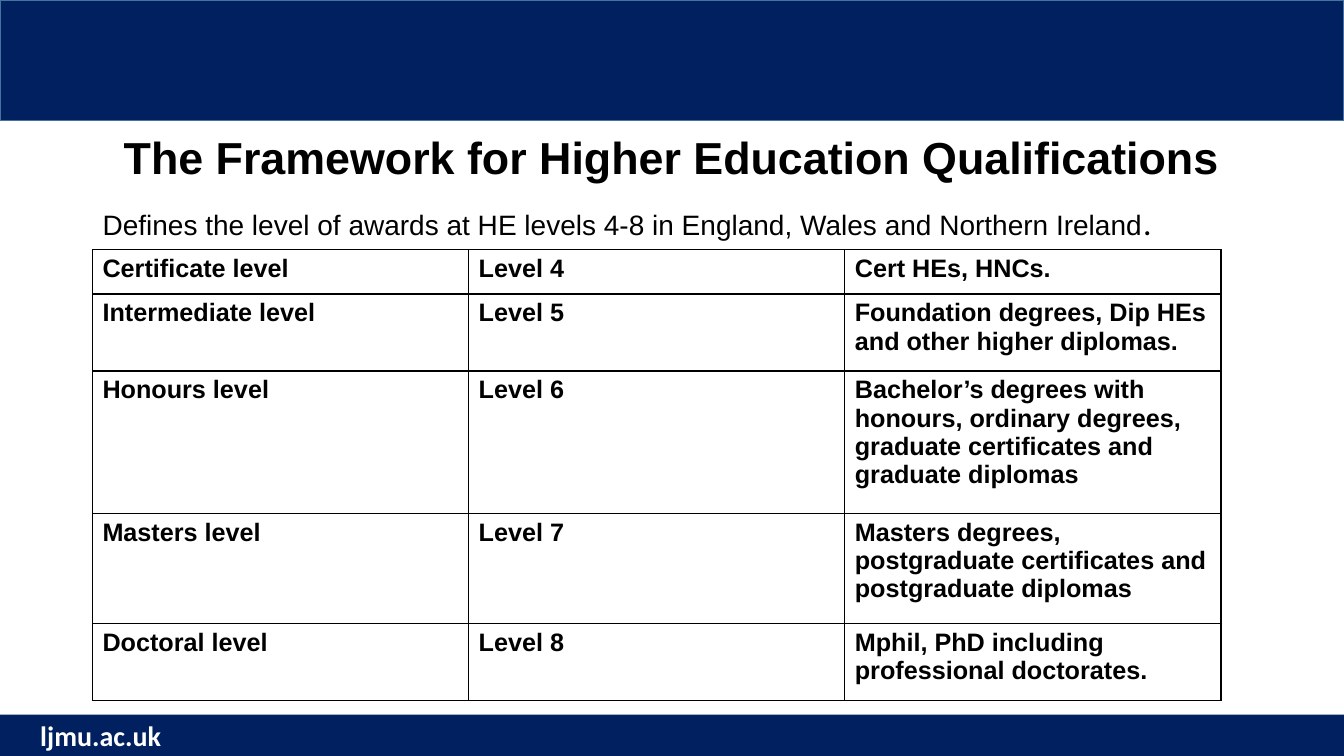
from lxml.etree import SubElement
from pptx import Presentation
from pptx.dml.color import RGBColor
from pptx.enum.shapes import MSO_SHAPE
from pptx.enum.text import MSO_ANCHOR, MSO_AUTO_SIZE, PP_ALIGN
from pptx.oxml.ns import qn
from pptx.util import Cm, Pt

NAVY = RGBColor(0x00, 0x20, 0x60)
EDGE = RGBColor(0x43, 0x73, 0x9E)
BLACK = RGBColor(0x00, 0x00, 0x00)
WHITE = RGBColor(0xFF, 0xFF, 0xFF)
LEFT, WIDTH = Cm(2.33), Cm(29.21)


def set_font(font, name, size, color, bold=False):
    font.name, font.size, font.bold = name, Pt(size), bold
    font.color.rgb = color


def add_borders(cell):
    tc_pr = cell._tc.get_or_add_tcPr()
    for side in ("a:lnL", "a:lnR", "a:lnT", "a:lnB"):
        ln = SubElement(tc_pr, qn(side), w=str(Pt(1)))
        fill = SubElement(ln, qn("a:solidFill"))
        SubElement(fill, qn("a:srgbClr"), val=str(BLACK))


prs = Presentation()
prs.slide_width, prs.slide_height = Cm(33.87), Cm(19.05)
s = prs.slides.add_slide(prs.slide_layouts[1])

for top, height, edge in ((0, 3.04, EDGE), (18.01, 1.04, None)):
    band = s.shapes.add_shape(MSO_SHAPE.RECTANGLE, 0, Cm(top), prs.slide_width, Cm(height))
    band.shadow.inherit = False
    band.fill.solid()
    band.fill.fore_color.rgb = NAVY
    if edge:
        band.line.color.rgb = edge
        band.line.width = Pt(1)
    else:
        band.line.fill.background()

sp = s.shapes.add_textbox(Cm(0.43), Cm(18.01), Cm(4.22), Cm(1.04))
tf = sp.text_frame
tf.word_wrap = True
tf.margin_top = tf.margin_bottom = 0
tf.vertical_anchor = MSO_ANCHOR.MIDDLE
p = tf.paragraphs[0]
p.text = "ljmu.ac.uk"
p.alignment = PP_ALIGN.CENTER
set_font(p.font, "Calibri", 20, WHITE, True)

title = s.shapes.title
title.left, title.top, title.width, title.height = LEFT, Cm(3.32), WIDTH, Cm(1.4)
tf = title.text_frame
tf.auto_size = MSO_AUTO_SIZE.NONE
tf.vertical_anchor = MSO_ANCHOR.MIDDLE
p = tf.paragraphs[0]
p.text = "The Framework for Higher Education Qualifications"
p.alignment = PP_ALIGN.CENTER
p.line_spacing = 0.9
set_font(p.font, "Arial", 32, BLACK, True)

body = s.placeholders[1]
body.left, body.top, body.width, body.height = LEFT, Cm(5.08), WIDTH, Cm(12.09)
tf = body.text_frame
tf.auto_size = MSO_AUTO_SIZE.NONE
p = tf.paragraphs[0]
p_pr = p._p.get_or_add_pPr()
p_pr.set("marL", "0")
p_pr.set("indent", "0")
SubElement(p_pr, qn("a:buNone"))
p.line_spacing = 0.9
p.space_before = Pt(0)
for text, name, size in (
    ("Defines the level of awards at HE levels 4-8 in England, Wales and Northern Ireland", "Arial", 20),
    (".", "Calibri", 24),
):
    r = p.add_run()
    r.text = text
    set_font(r.font, name, size, BLACK)

levels = [
    ("Certificate level", "Level 4", "Cert HEs, HNCs.", 1.12),
    ("Intermediate level", "Level 5", "Foundation degrees, Dip HEs and other higher diplomas.", 1.94),
    ("Honours level", "Level 6",
     "Bachelor’s degrees with honours, ordinary degrees, graduate certificates and graduate diplomas", 3.59),
    ("Masters level", "Level 7",
     "Masters degrees, postgraduate certificates and postgraduate diplomas", 2.77),
    ("Doctoral level", "Level 8", "Mphil, PhD including professional doctorates.", 1.94),
]
frame = s.shapes.add_table(len(levels), 3, LEFT, Cm(6.29), Cm(28.44), Cm(11.36))
table = frame.table
table.first_row = table.horz_banding = False
for column in table.columns:
    column.width = Cm(9.48)
for row, (*texts, height) in zip(table.rows, levels):
    row.height = Cm(height)
    for cell, text in zip(row.cells, texts):
        add_borders(cell)
        cell.fill.background()
        p = cell.text_frame.paragraphs[0]
        p.text = text
        set_font(p.font, "Arial", 18, BLACK, True)

prs.save("out.pptx")
